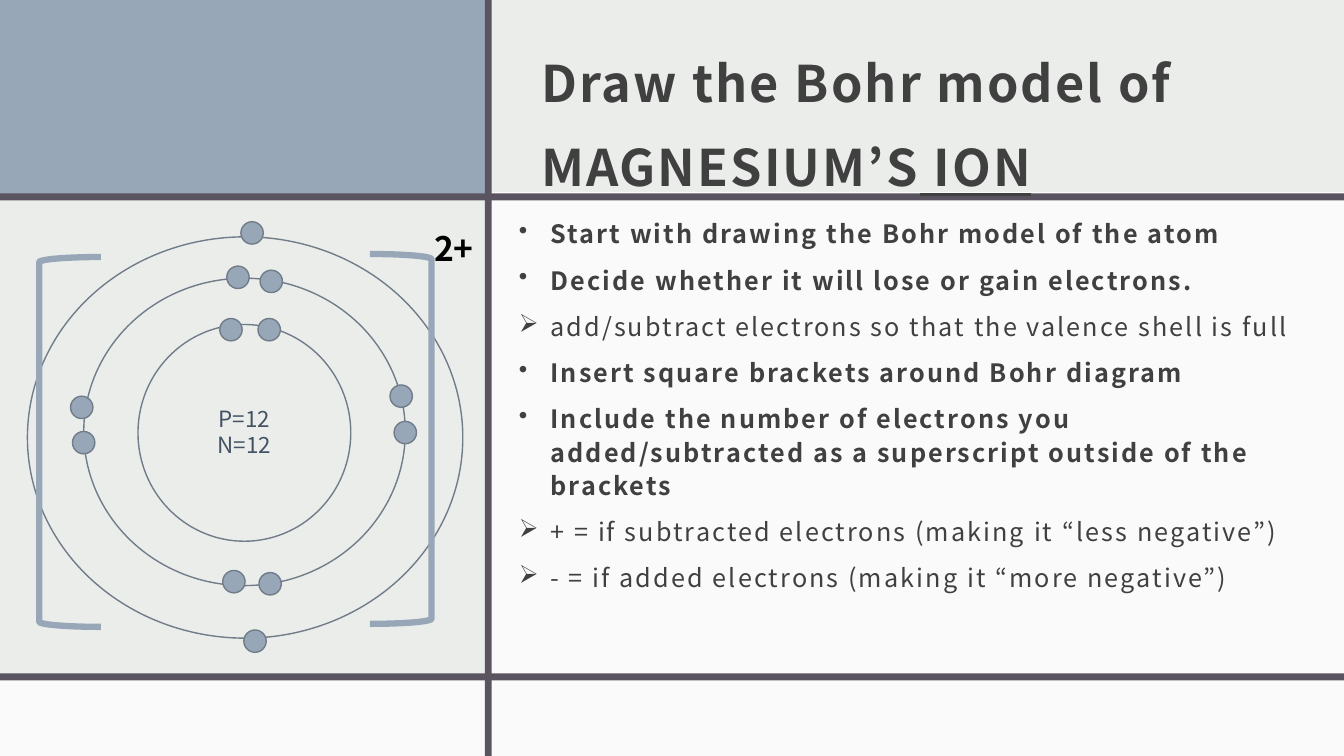
from dataclasses import dataclass
from typing import Optional

from lxml import etree
from pptx import Presentation
from pptx.dml.color import RGBColor
from pptx.enum.shapes import MSO_SHAPE
from pptx.enum.text import MSO_ANCHOR, PP_ALIGN
from pptx.oxml.ns import qn
from pptx.util import Pt

RECTANGLE = MSO_SHAPE.RECTANGLE
OVAL = MSO_SHAPE.OVAL
LEFT_BRACKET = MSO_SHAPE.LEFT_BRACKET
TOP = MSO_ANCHOR.TOP
MIDDLE = MSO_ANCHOR.MIDDLE
LEFT = PP_ALIGN.LEFT
CENTER = PP_ALIGN.CENTER


@dataclass(frozen=True)
class Theme:
    font: str = "Noto Sans CJK JP"
    background: str = "EBEDEB"
    panel: str = "FFFFFF"
    accent: str = "97A7B8"
    rule: str = "595460"
    outline: str = "707C88"
    text: str = "404040"
    nucleus: str = "445364"
    charge: str = "000000"
    title_size: float = 36
    charge_size: float = 24
    body_size: float = 18
    nucleus_size: float = 16
    tracking: int = 150
    panel_opacity: int = 75


THEME = Theme()


@dataclass(frozen=True)
class Box:
    left: float
    top: float
    width: float
    height: float

    def lengths(self) -> tuple:
        return Pt(self.left), Pt(self.top), Pt(self.width), Pt(self.height)


@dataclass(frozen=True)
class Figure:
    box: Box
    preset: MSO_SHAPE = RECTANGLE
    fill: Optional[str] = None
    opacity: int = 100
    line: Optional[str] = None
    line_width: float = 1
    rotation: float = 0


@dataclass(frozen=True)
class Span:
    text: str
    bold: bool = True
    underline: bool = False


@dataclass(frozen=True)
class Line:
    spans: tuple
    bullet: str = ""
    level: int = 0


@dataclass(frozen=True)
class TextStyle:
    size: float
    color: str
    tracking: int = 0
    line_spacing: float = 1
    space_before: float = 0
    alignment: PP_ALIGN = LEFT
    anchor: MSO_ANCHOR = TOP
    wrap: bool = True


def main_step(text: str) -> Line:
    return Line((Span(text),), "•")


def detail(text: str) -> Line:
    return Line((Span(text, bold=False),), "➢", 1)


def electron(left: float, top: float) -> Figure:
    return Figure(Box(left, top, 16, 16), OVAL, THEME.accent, line=THEME.outline)


def shell(box: Box) -> Figure:
    return Figure(box, OVAL, line=THEME.outline)


def panel(box: Box) -> Figure:
    return Figure(box, fill=THEME.panel, opacity=THEME.panel_opacity)


def bracket(box: Box, rotation: float = 0) -> Figure:
    return Figure(box, LEFT_BRACKET, line=THEME.accent, line_width=4.5, rotation=rotation)


LAYOUT = [
    Figure(Box(0, 0, 348.5, 142), fill=THEME.accent),
    panel(Box(348.5, 137, 611.5, 348.5)),
    Figure(Box(0, 138.2, 960, 5), fill=THEME.rule),
    panel(Box(0, 485.3, 960, 54.7)),
    Figure(Box(0, 481, 960, 5), fill=THEME.rule),
    Figure(Box(346.3, 0, 5, 540), fill=THEME.rule),
]
SHELLS = [
    shell(Box(98.6, 231.8, 152, 154.8)),
    shell(Box(59.8, 198.7, 229.7, 219.6)),
    shell(Box(19.6, 169.2, 311, 286.6)),
]
ELECTRON_CORNERS = [
    (157, 227.5), (184.3, 227.5),
    (162, 190.1), (185.8, 193),
    (278.6, 275), (281.5, 301),
    (159.1, 407.5), (185, 409),
    (50.4, 283), (51.8, 308.2),
    (172.1, 158.4), (174.2, 450),
]
BRACKETS = [
    bracket(Box(28.1, 183.6, 44, 264.2)),
    bracket(Box(264.2, 181.4, 44, 264.2), rotation=180),
]

TITLE = [Line((Span("Draw the Bohr model of MAGNESIUM’S"), Span(" ION", underline=True)))]
NUCLEUS = [Line((Span(text, bold=False),)) for text in ("P=12", "N=12")]
STEPS = [
    main_step("Start with drawing the Bohr model of the atom"),
    main_step("Decide whether it will lose or gain electrons."),
    detail("add/subtract electrons so that the valence shell is full"),
    main_step("Insert square brackets around Bohr diagram"),
    main_step("Include the number of electrons you added/subtracted as a superscript outside of the brackets"),
    detail("+ = if subtracted electrons (making it “less negative”)"),
    detail("- = if added electrons (making it “more negative”)"),
]
CHARGE = [Line((Span("2+"),))]

TITLE_STYLE = TextStyle(THEME.title_size, THEME.text, THEME.tracking, 1.4, anchor=MIDDLE)
NUCLEUS_STYLE = TextStyle(THEME.nucleus_size, THEME.nucleus, alignment=CENTER, anchor=MIDDLE)
BODY_STYLE = TextStyle(THEME.body_size, THEME.text, THEME.tracking, 1.1, 9.3)
CHARGE_STYLE = TextStyle(THEME.charge_size, THEME.charge, wrap=False)


def draw_figure(slide, figure: Figure):
    shape = slide.shapes.add_shape(figure.preset, *figure.box.lengths())
    shape.shadow.inherit = False
    shape.rotation = figure.rotation
    if figure.fill:
        shape.fill.solid()
        shape.fill.fore_color.rgb = RGBColor.from_string(figure.fill)
        if figure.opacity < 100:
            color = next(shape._element.spPr.iter(qn("a:srgbClr")))
            etree.SubElement(color, qn("a:alpha"), val=str(figure.opacity * 1000))
    else:
        shape.fill.background()
    if figure.line:
        shape.line.color.rgb = RGBColor.from_string(figure.line)
        shape.line.width = Pt(figure.line_width)
    else:
        shape.line.fill.background()
    return shape


def add_bullet(paragraph, bullet: str) -> None:
    properties = paragraph._p.get_or_add_pPr()
    indent = Pt(22.5)
    properties.set("marL", str(indent))
    properties.set("indent", str(-indent))
    etree.SubElement(properties, qn("a:buChar"), char=bullet)


def write_text(shape, lines: list, style: TextStyle) -> None:
    frame = shape.text_frame
    frame.word_wrap = style.wrap
    frame.vertical_anchor = style.anchor
    for index, line in enumerate(lines):
        paragraph = frame.add_paragraph() if index else frame.paragraphs[0]
        paragraph.alignment = style.alignment
        paragraph.level = line.level
        paragraph.line_spacing = style.line_spacing
        paragraph.space_before = Pt(style.space_before if index else 0)
        if line.bullet:
            add_bullet(paragraph, line.bullet)
        for span in line.spans:
            run = paragraph.add_run()
            run.text = span.text
            run.font.name = THEME.font
            run.font.size = Pt(style.size)
            run.font.bold = span.bold
            run.font.underline = span.underline
            run.font.color.rgb = RGBColor.from_string(style.color)
            if style.tracking:
                run.font._element.set("spc", str(style.tracking))


def draw_text(slide, box: Box, lines: list, style: TextStyle) -> None:
    write_text(slide.shapes.add_textbox(*box.lengths()), lines, style)


def main() -> None:
    presentation = Presentation()
    presentation.slide_width, presentation.slide_height = Pt(960), Pt(540)
    slide = presentation.slides.add_slide(presentation.slide_layouts[6])
    slide.background.fill.solid()
    slide.background.fill.fore_color.rgb = RGBColor.from_string(THEME.background)
    for figure in LAYOUT:
        draw_figure(slide, figure)
    draw_text(slide, Box(379.4, 11.5, 571, 137.5), TITLE, TITLE_STYLE)
    nucleus = draw_figure(slide, Figure(Box(126.7, 260, 95.8, 96.5), OVAL))
    write_text(nucleus, NUCLEUS, NUCLEUS_STYLE)
    electrons = [electron(*corner) for corner in ELECTRON_CORNERS]
    for figure in SHELLS + electrons:
        draw_figure(slide, figure)
    draw_text(slide, Box(363.6, 150.5, 591, 348.5), STEPS, BODY_STYLE)
    for figure in BRACKETS:
        draw_figure(slide, figure)
    draw_text(slide, Box(303, 159, 82, 36), CHARGE, CHARGE_STYLE)
    presentation.save("out.pptx")


if __name__ == "__main__":
    main()
